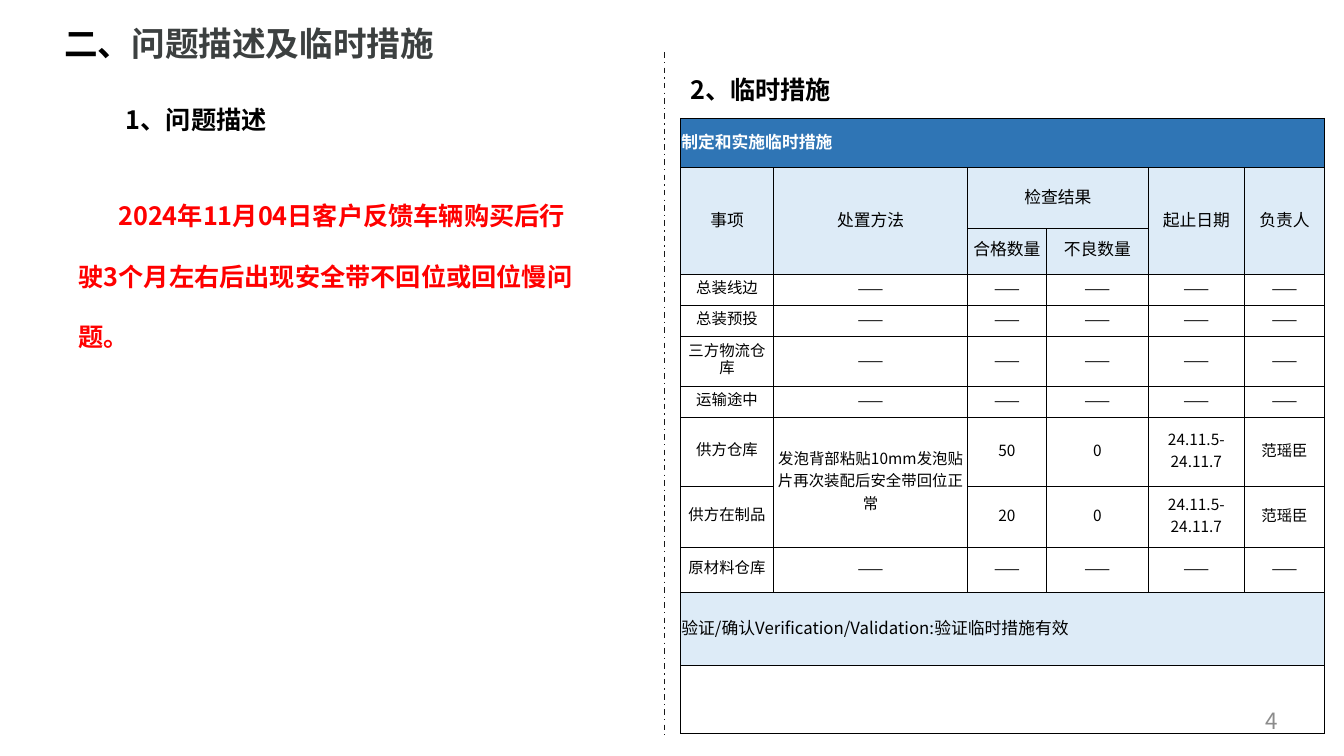
from dataclasses import dataclass

from lxml import etree
from pptx import Presentation
from pptx.dml.color import RGBColor
from pptx.enum.dml import MSO_LINE
from pptx.enum.shapes import MSO_CONNECTOR
from pptx.enum.text import MSO_ANCHOR, PP_ALIGN
from pptx.oxml.ns import qn
from pptx.slide import Slide
from pptx.table import _Cell
from pptx.util import Pt

LEFT, CENTER, RIGHT = PP_ALIGN.LEFT, PP_ALIGN.CENTER, PP_ALIGN.RIGHT
TOP, MIDDLE = MSO_ANCHOR.TOP, MSO_ANCHOR.MIDDLE
DASH_DOT = MSO_LINE.DASH_DOT
STRAIGHT = MSO_CONNECTOR.STRAIGHT

SANS = "Noto Sans CJK SC"
ARIAL = "Arial"
COLORS = {
    "black": "000000",
    "title": "3C4040",
    "page": "8C8C8C",
    "red": "FF0000",
    "divider": "191919",
    "white": "FFFFFF",
    "banner": "2F75B5",
    "pale": "DDEBF7",
}


@dataclass
class Label:
    left: float
    top: float
    width: float
    height: float
    runs: list[tuple[str, str]]
    size: float = 18
    bold: bool = True
    align: PP_ALIGN = LEFT
    anchor: MSO_ANCHOR = TOP
    line_spacing: float = 1
    indent: float = 0


@dataclass
class CellStyle:
    size: float = 11
    color: str = "black"
    bold: bool = False
    align: PP_ALIGN = CENTER
    font: str = SANS
    fill: str = ""


LABELS = [
    Label(38.9, 13, 797.8, 65.5,
          [("二、", "black"), ("问题描述及临时措施", "title")], size=24),
    Label(704.2, 500.4, 216, 28.8, [("4", "page")], size=16, bold=False,
          align=RIGHT, anchor=MIDDLE),
    Label(49, 118.1, 373, 311.8,
          [("2024年11月04日客户反馈车辆购买后行驶3个月左右后出现安全带不回位或回位慢问题。", "red")],
          line_spacing=2, indent=28.5),
    Label(82.8, 71.3, 319.7, 28.8, [("1、问题描述", "black")]),
    Label(486, 49.7, 319.7, 28.8, [("2、临时措施", "black")]),
]

COLUMN_WIDTHS = [66.7, 138.4, 56.4, 72.8, 68.6, 57.4]
ROW_HEIGHTS = [35.2, 43.6, 32.6, 22.2, 22.2, 35.6, 22.2, 49.6, 43.2, 32.6, 52, 48.4]
DASHES = ["——"] * 5
SUPPLIER_CHECK = ["0", "24.11.5-24.11.7", "范瑶臣"]
ROWS = [
    ["制定和实施临时措施"],
    ["事项", "处置方法", "检查结果", "", "起止日期", "负责人"],
    ["", "", "合格数量", "不良数量"],
    ["总装线边", *DASHES],
    ["总装预投", *DASHES],
    ["三方物流仓库", *DASHES],
    ["运输途中", *DASHES],
    ["供方仓库", "发泡背部粘贴10mm发泡贴片再次装配后安全带回位正常", "50", *SUPPLIER_CHECK],
    ["供方在制品", "", "20", *SUPPLIER_CHECK],
    ["原材料仓库", *DASHES],
    ["验证/确认Verification/Validation:验证临时措施有效"],
    [],
]
MERGES = [
    ((0, 0), (0, 5)),
    ((1, 0), (2, 0)),
    ((1, 1), (2, 1)),
    ((1, 2), (1, 3)),
    ((1, 4), (2, 4)),
    ((1, 5), (2, 5)),
    ((7, 1), (8, 1)),
    ((10, 0), (10, 5)),
    ((11, 0), (11, 5)),
]


def color(name: str) -> RGBColor:
    return RGBColor.from_string(COLORS[name])


def set_font(paragraph, name: str, size: float, bold: bool, color_name: str) -> None:
    font = paragraph.font
    font.size, font.bold, font.name = Pt(size), bold, name
    font.color.rgb = color(color_name)
    properties = paragraph._p.pPr.find(qn("a:defRPr"))
    etree.SubElement(properties, qn("a:ea"), typeface=name)


def add_label(slide: Slide, label: Label) -> None:
    shape = slide.shapes.add_textbox(
        Pt(label.left), Pt(label.top), Pt(label.width), Pt(label.height))
    frame = shape.text_frame
    frame.word_wrap = True
    frame.vertical_anchor = label.anchor
    paragraph = frame.paragraphs[0]
    paragraph.alignment = label.align
    paragraph.line_spacing = label.line_spacing
    if label.indent:
        paragraph._p.get_or_add_pPr().set("indent", str(Pt(label.indent)))
    set_font(paragraph, SANS, label.size, label.bold, label.runs[0][1])
    for text, color_name in label.runs:
        run = paragraph.add_run()
        run.text = text
        if color_name != label.runs[0][1]:
            run.font.color.rgb = color(color_name)


def add_divider(slide: Slide) -> None:
    divider = slide.shapes.add_connector(
        STRAIGHT, Pt(474.5), Pt(37.4), Pt(474.5), Pt(524.9))
    divider.line.color.rgb = color("divider")
    divider.line.width = Pt(1)
    divider.line.dash_style = DASH_DOT
    etree.SubElement(divider._element.spPr, qn("a:effectLst"))


def add_borders(cell: _Cell) -> None:
    properties = cell._tc.get_or_add_tcPr()
    for side in ("lnL", "lnR", "lnT", "lnB"):
        line = etree.SubElement(properties, qn(f"a:{side}"), w=str(Pt(0.5)))
        fill = etree.SubElement(line, qn("a:solidFill"))
        etree.SubElement(fill, qn("a:srgbClr"), val=COLORS["black"])


def cell_style(row: int, column: int) -> CellStyle:
    if row == 0:
        return CellStyle(12, "white", True, LEFT, fill="banner")
    if row == 10:
        return CellStyle(12, align=LEFT, fill="pale")
    if row in (1, 2):
        return CellStyle(12, font=SANS if row == 1 else ARIAL, fill="pale")
    if column == 0 and row < 10:
        return CellStyle(font=ARIAL, fill="white")
    return CellStyle()


def format_cell(cell: _Cell, text: str, style: CellStyle) -> None:
    add_borders(cell)
    if style.fill:
        cell.fill.solid()
        cell.fill.fore_color.rgb = color(style.fill)
    else:
        cell.fill.background()
    cell.margin_left = cell.margin_right = cell.margin_top = Pt(0.7)
    cell.margin_bottom = Pt(3.6)
    cell.vertical_anchor = MIDDLE
    if text:
        cell.text = text
        paragraph = cell.text_frame.paragraphs[0]
        paragraph.alignment = style.align
        set_font(paragraph, style.font, style.size, style.bold, style.color)


def add_measures_table(slide: Slide) -> None:
    table = slide.shapes.add_table(
        len(ROW_HEIGHTS), len(COLUMN_WIDTHS), Pt(486), Pt(84.5),
        Pt(sum(COLUMN_WIDTHS)), Pt(sum(ROW_HEIGHTS))).table
    table.first_row = table.horz_banding = False
    for column, width in zip(table.columns, COLUMN_WIDTHS):
        column.width = Pt(width)
    for row, height in zip(table.rows, ROW_HEIGHTS):
        row.height = Pt(height)
    for row_index, texts in enumerate(ROWS):
        for column_index in range(len(COLUMN_WIDTHS)):
            text = texts[column_index] if column_index < len(texts) else ""
            format_cell(table.cell(row_index, column_index), text,
                        cell_style(row_index, column_index))
    for first, last in MERGES:
        table.cell(*first).merge(table.cell(*last))


def main() -> None:
    presentation = Presentation()
    presentation.slide_width, presentation.slide_height = Pt(960), Pt(540)
    slide = presentation.slides.add_slide(presentation.slide_layouts[6])
    for label in LABELS:
        add_label(slide, label)
    add_divider(slide)
    add_measures_table(slide)
    presentation.save("out.pptx")


if __name__ == "__main__":
    main()
